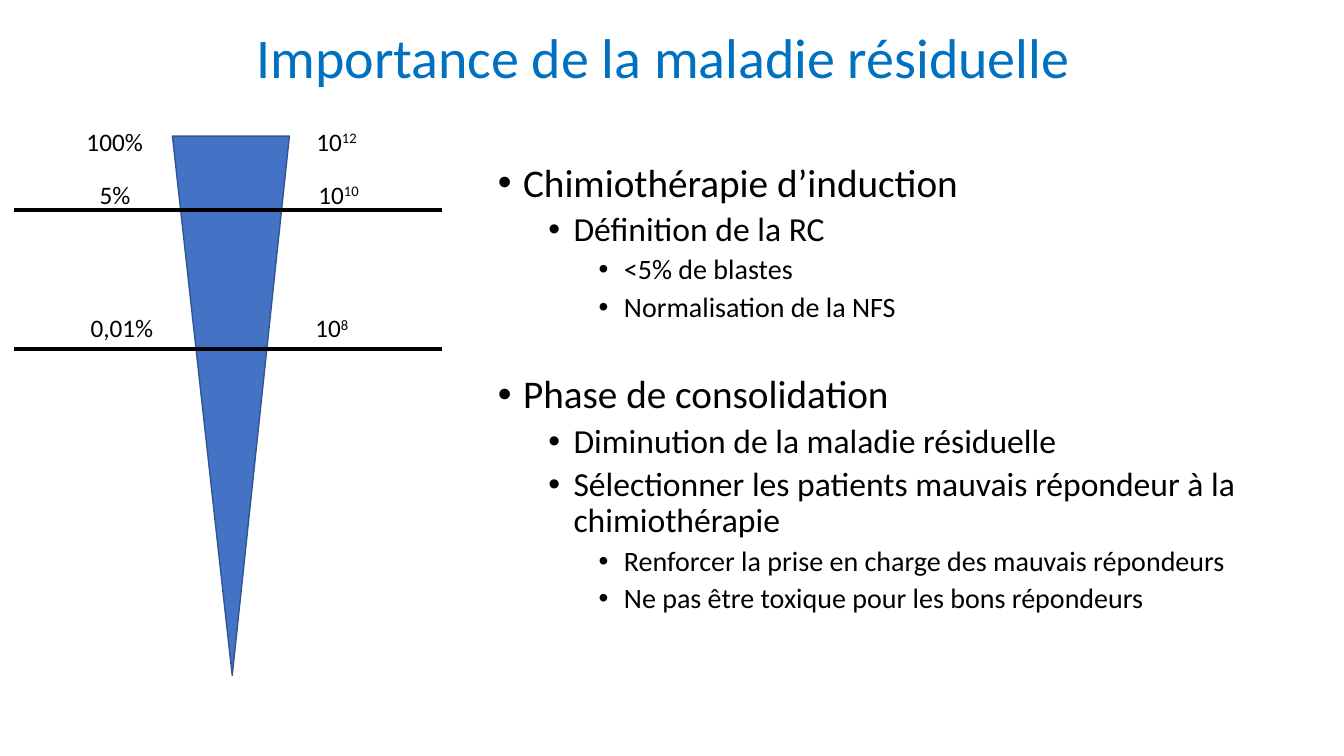
import pptx
import pptx.dml.color
import pptx.enum.shapes
import pptx.enum.text
import pptx.util
from lxml import etree
from pptx.util import Inches

FONT = "Calibri"
COLORS = {"title": "0070C0", "text": "000000", "wedge": "4472C4", "wedge_edge": "325491"}

TITLE = "Importance de la maladie résiduelle "
# level, text, space before in points
OUTLINE = [
    (0, "Chimiothérapie d’induction", 10),
    (1, "Définition de la RC", 5),
    (2, "<5% de blastes", 5),
    (2, "Normalisation de la NFS", 5),
    (0, "Phase de consolidation", 37),
    (1, "Diminution de la maladie résiduelle", 5),
    (1, "Sélectionner les patients mauvais répondeur à la chimiothérapie", 5),
    (2, "Renforcer la prise en charge des mauvais répondeurs", 5),
    (2, "Ne pas être toxique pour les bons répondeurs", 5),
]
LEVEL_SIZES = [28, 24, 20]
# top, (left, width, share of blasts), (left, width, exponent of the cell count)
STAGES = [
    (1.2, (0.76, 0.77, "100%"), (3.04, 0.63, "12")),
    (1.73, (0.89, 0.51, "5%"), (3.06, 0.63, "10")),
    (3.05, (0.8, 0.83, "0,01%"), (3.03, 0.54, "8")),
]
THRESHOLDS = [2.08, 3.46]
LINE_LEFT, LINE_RIGHT = 0.14, 4.38


def rgb(name):
    return pptx.dml.color.RGBColor.from_string(COLORS[name])


def add_span(para, text, size, color="text"):
    span = para.add_run()
    span.text = text
    span.font.name = FONT
    span.font.size = pptx.util.Pt(size)
    span.font.color.rgb = rgb(color)
    return span


def add_bullet(para, level):
    props = para._p.get_or_add_pPr()
    props.set("marL", str(Inches(0.25 + 0.5 * level)))
    props.set("indent", str(Inches(-0.25)))
    for tag, key, value in (("buFont", "typeface", "Arial"), ("buChar", "char", "•")):
        etree.SubElement(props, pptx.oxml.ns.qn("a:" + tag)).set(key, value)


def add_label(page, left, top, width, base, exponent=""):
    box = page.shapes.add_textbox(Inches(left), Inches(top), Inches(width), Inches(0.4))
    box.text_frame.word_wrap = False
    box.text_frame.auto_size = pptx.enum.text.MSO_AUTO_SIZE.SHAPE_TO_FIT_TEXT
    para = box.text_frame.paragraphs[0]
    add_span(para, base, 18)
    if exponent:
        power = add_span(para, exponent, 18)
        power.font._element.set("baseline", "30000")


def add_title(page):
    title = page.shapes.title
    title.left, title.top = Inches(0.89), Inches(0.06)
    title.width, title.height = Inches(11.5), Inches(1.08)
    title.text_frame.vertical_anchor = pptx.enum.text.MSO_ANCHOR.MIDDLE
    para = title.text_frame.paragraphs[0]
    para.alignment = pptx.enum.text.PP_ALIGN.CENTER
    para.line_spacing = 0.9
    add_span(para, TITLE, 40, "title")


def add_outline(page):
    box = page.shapes.add_textbox(Inches(4.84), Inches(1.57), Inches(7.7), Inches(4.77))
    frame = box.text_frame
    frame.word_wrap = True
    for index, (level, text, gap) in enumerate(OUTLINE):
        para = frame.add_paragraph() if index else frame.paragraphs[0]
        para.level = level
        para.line_spacing = 0.9
        para.space_before = pptx.util.Pt(gap)
        add_bullet(para, level)
        add_span(para, text, LEVEL_SIZES[level])


def add_wedge(page):
    wedge = page.shapes.add_shape(
        pptx.enum.shapes.MSO_SHAPE.ISOSCELES_TRIANGLE,
        Inches(1.71), Inches(1.35), Inches(1.16), Inches(5.35))
    wedge.rotation = 180
    wedge.adjustments[0] = 0.489
    wedge.shadow.inherit = False
    wedge.fill.solid()
    wedge.fill.fore_color.rgb = rgb("wedge")
    wedge.line.color.rgb = rgb("wedge_edge")
    wedge.line.width = pptx.util.Pt(1)


def add_threshold(page, y):
    line = page.shapes.add_connector(
        pptx.enum.shapes.MSO_CONNECTOR.STRAIGHT,
        Inches(LINE_LEFT), Inches(y), Inches(LINE_RIGHT), Inches(y))
    line.line.color.rgb = rgb("text")
    line.line.width = pptx.util.Pt(3)
    etree.SubElement(line._element.spPr, pptx.oxml.ns.qn("a:effectLst"))


def main():
    deck = pptx.Presentation()
    deck.slide_width, deck.slide_height = Inches(13.33), Inches(7.5)
    page = deck.slides.add_slide(deck.slide_layouts.get_by_name("Title Only"))
    add_title(page)
    add_outline(page)
    add_wedge(page)
    for y in THRESHOLDS:
        add_threshold(page, y)
    for top, (left, width, share), (count_left, count_width, exponent) in STAGES:
        add_label(page, left, top, width, share)
        add_label(page, count_left, top, count_width, "10", exponent)
    deck.save("out.pptx")


if __name__ == "__main__":
    main()
